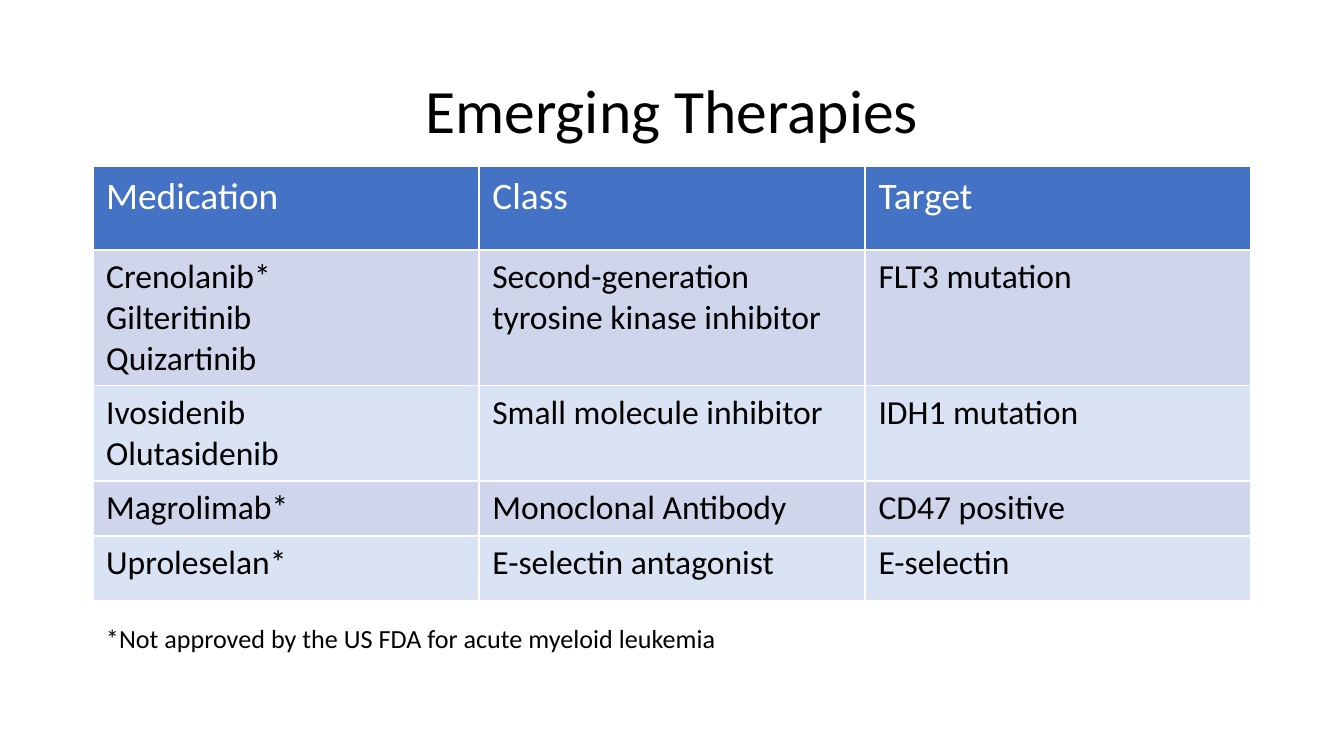
from lxml.etree import SubElement
from pptx import Presentation
from pptx.dml.color import RGBColor
from pptx.enum.text import MSO_ANCHOR, PP_ALIGN
from pptx.oxml.ns import qn
from pptx.util import Inches, Pt


def format_text(frame, size, color):
    for paragraph in frame.paragraphs:
        for span in paragraph.runs:
            span.font.name = "Calibri"
            span.font.size = Pt(size)
            span.font.bold = False
            span.font.color.rgb = RGBColor.from_string(color)


def add_border(cell, side):
    line = SubElement(cell._tc.get_or_add_tcPr(), qn(f"a:{side}"), w=str(Pt(1)))
    fill = SubElement(line, qn("a:solidFill"))
    SubElement(fill, qn("a:srgbClr"), val="FFFFFF")


# Widescreen 16:9 page
deck = Presentation()
deck.slide_width = Inches(10)
deck.slide_height = Inches(10) * 9 // 16
page = deck.slides.add_slide(deck.slide_layouts[6])
left, width = Inches(0.69), Inches(8.62)

# Title
title = page.shapes.add_textbox(left, Inches(0.3), width, Inches(1.09))
frame = title.text_frame
frame.word_wrap = True
frame.vertical_anchor = MSO_ANCHOR.MIDDLE
frame.text = "Emerging Therapies"
frame.paragraphs[0].alignment = PP_ALIGN.CENTER
frame.paragraphs[0].line_spacing = 0.9
format_text(frame, 33, "000000")

# Therapy table
therapies = [
    ("Medication", "Class", "Target"),
    ("Crenolanib*\nGilteritinib\nQuizartinib",
     "Second-generation tyrosine kinase inhibitor", "FLT3 mutation"),
    ("Ivosidenib\nOlutasidenib", "Small molecule inhibitor", "IDH1 mutation"),
    ("Magrolimab*", "Monoclonal Antibody", "CD47 positive"),
    ("Uproleselan*", "E-selectin antagonist", "E-selectin"),
]
row_heights = [0.62, 1.01, 0.71, 0.41, 0.48]
row_fills = ["4472C4", "CFD5EA", "DAE3F3", "CFD5EA", "DAE3F3"]
table = page.shapes.add_table(len(therapies), 3, left, Inches(1.24),
                              width, Inches(sum(row_heights))).table

for row, values in enumerate(therapies):
    header = row == 0
    table.rows[row].height = Inches(row_heights[row])
    for column, value in enumerate(values):
        cell = table.cell(row, column)
        cell.text_frame.text = value
        format_text(cell.text_frame, 20 if header else 18,
                    "FFFFFF" if header else "000000")
        for side in ("lnL", "lnR", "lnT", "lnB"):
            add_border(cell, side)
        cell.fill.solid()
        cell.fill.fore_color.rgb = RGBColor.from_string(row_fills[row])

# Footnote
footnote = page.shapes.add_textbox(left, Inches(4.58), Inches(4.78), Inches(0.34))
footnote.text_frame.word_wrap = False
footnote.text_frame.text = "*Not approved by the US FDA for acute myeloid leukemia"
format_text(footnote.text_frame, 14, "000000")

deck.save("out.pptx")
